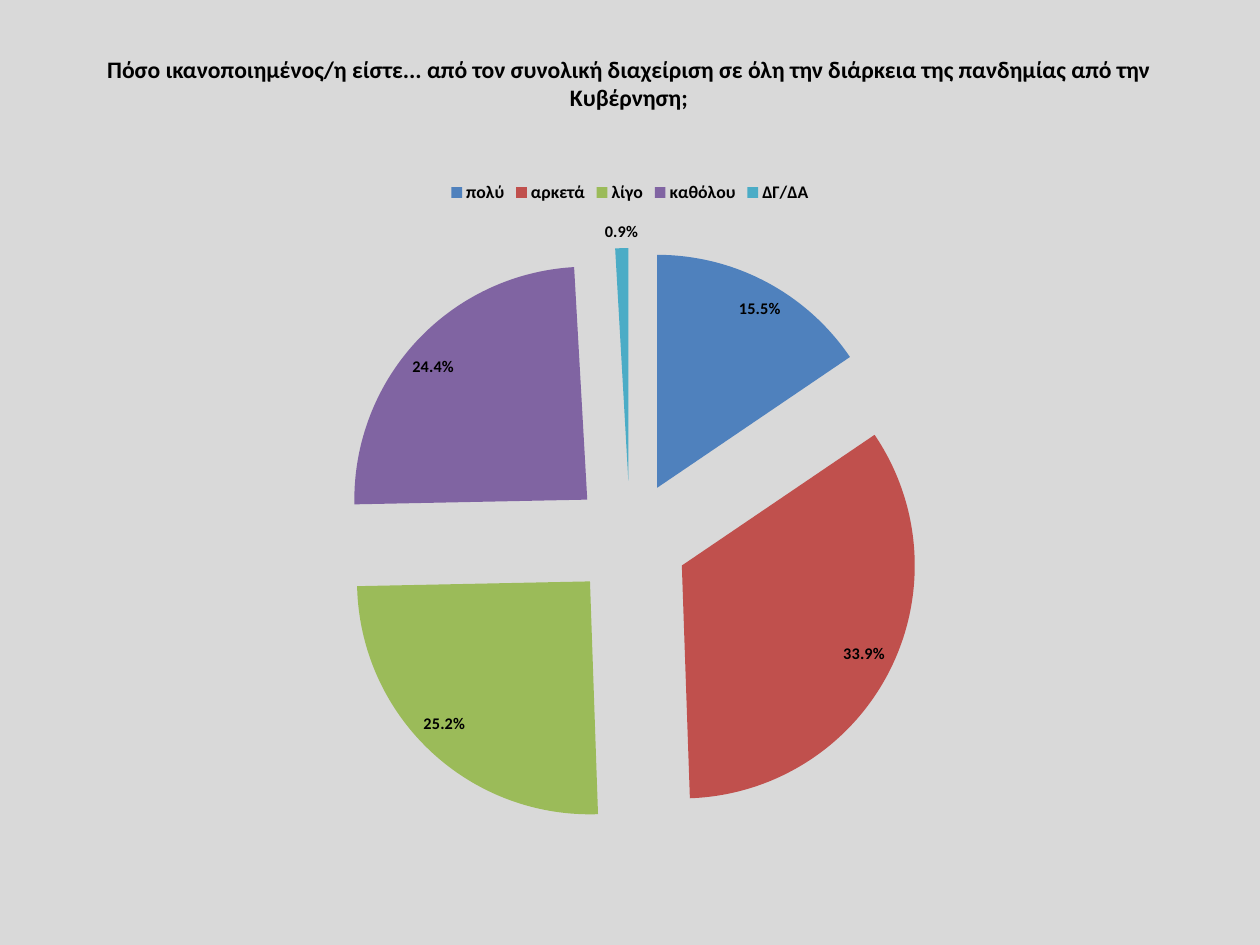
import pptx
import pptx.util
import pptx.dml.color
import pptx.chart.data
import pptx.enum.chart
import pptx.enum.text
import pptx.oxml

PX = 8594
FONT = "Calibri"
COLOURS = {
    "background": "D9D9D9",
    "text": "000000",
    "πολύ": "4F81BD",
    "αρκετά": "C0504D",
    "λίγο": "9BBB59",
    "καθόλου": "8064A2",
    "ΔΓ/ΔΑ": "4BACC6",
}
ANSWERS = {"πολύ": 15.5, "αρκετά": 33.9, "λίγο": 25.2, "καθόλου": 24.4, "ΔΓ/ΔΑ": 0.9}
QUESTION = (
    "Πόσο ικανοποιημένος/η είστε... από τον συνολική διαχείριση "
    "σε όλη την διάρκεια της πανδημίας από την Κυβέρνηση;"
)


def px(length):
    """Turn pixels into EMU."""
    return pptx.util.Emu(length * PX)


def rgb(name):
    """Look up a named colour."""
    return pptx.dml.color.RGBColor.from_string(COLOURS[name])


def format_font(font, size, bold=False, colour="text"):
    """Set the typeface, size, weight and colour of a font."""
    font.name = FONT
    font.size = pptx.util.Pt(size)
    font.bold = bold
    font.color.rgb = rgb(colour)


def write_text(frame, text, size, bold=False, colour="text", align="CENTER"):
    """Fill a text frame with one formatted paragraph."""
    paragraph = frame.paragraphs[0]
    paragraph.alignment = getattr(pptx.enum.text.PP_ALIGN, align)
    run = paragraph.add_run()
    run.text = text
    format_font(run.font, size, bold, colour)


def place_title(slide, left, top, width, height):
    """Put the survey question in the title placeholder."""
    title = slide.shapes.title
    title.left, title.top = px(left), px(top)
    title.width, title.height = px(width), px(height)
    frame = title.text_frame
    frame.word_wrap = True
    frame.auto_size = pptx.enum.text.MSO_AUTO_SIZE.NONE
    frame.vertical_anchor = pptx.enum.text.MSO_ANCHOR.MIDDLE
    frame.margin_left = frame.margin_right = px(13)
    frame.margin_top = frame.margin_bottom = px(6)
    write_text(frame, QUESTION, size=16, bold=True)


def explode(series, percent):
    """Pull every slice of the pie away from its centre."""
    explosion = pptx.oxml.parse_xml(
        '<c:explosion xmlns:c="http://schemas.openxmlformats.org/drawingml/2006/chart"'
        f' val="{percent}"/>'
    )
    series.format.fill.background()
    series._element.spPr.addnext(explosion)


def place_pie(slide, left, top, width, height):
    """Draw the exploded pie of answers with its legend on top."""
    data = pptx.chart.data.CategoryChartData(number_format="0.0")
    data.categories = list(ANSWERS)
    data.add_series("Series 1", list(ANSWERS.values()))
    chart = slide.shapes.add_chart(
        pptx.enum.chart.XL_CHART_TYPE.PIE,
        px(left), px(top), px(width), px(height), data,
    ).chart
    format_font(chart.font, size=10)
    chart.has_title = False
    chart.has_legend = True
    chart.legend.position = pptx.enum.chart.XL_LEGEND_POSITION.TOP
    chart.legend.include_in_layout = False
    format_font(chart.legend.font, size=12, bold=True)

    plot = chart.plots[0]
    plot.vary_by_categories = True
    series = plot.series[0]
    explode(series, percent=25)
    for index, answer in enumerate(ANSWERS):
        fill = series.points[index].format.fill
        fill.solid()
        fill.fore_color.rgb = rgb(answer)

    labels = series.data_labels
    labels.show_percentage = True
    labels.show_value = False
    labels.number_format = "0.0%"
    labels.number_format_is_linked = False
    labels.position = pptx.enum.chart.XL_LABEL_POSITION.BEST_FIT
    format_font(labels.font, size=11, bold=True)


def main():
    """Build and save the survey slide."""
    presentation = pptx.Presentation()
    presentation.slide_width, presentation.slide_height = px(1260), px(945)
    slide = presentation.slides.add_slide(presentation.slide_layouts.get_by_name("Title Only"))
    slide.background.fill.solid()
    slide.background.fill.fore_color.rgb = rgb("background")
    place_title(slide, 86, 50, 1086, 66)
    place_pie(slide, 63, 170, 1134, 675)
    presentation.save("out.pptx")


if __name__ == "__main__":
    main()
